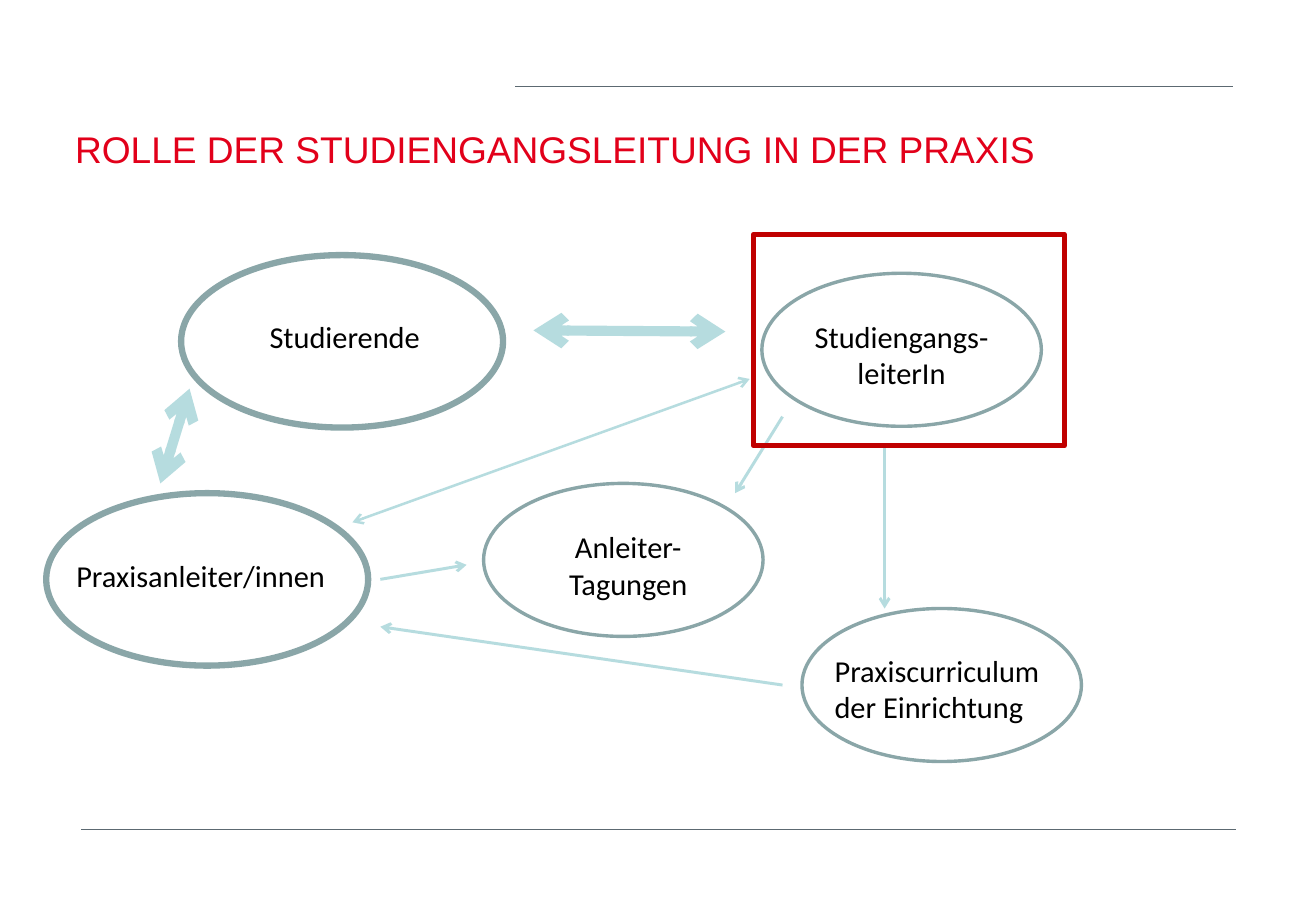
from pptx import Presentation
from pptx.dml.color import RGBColor
from pptx.enum.shapes import MSO_CONNECTOR, MSO_SHAPE
from pptx.enum.text import MSO_ANCHOR, PP_ALIGN
from pptx.oxml.ns import qn
from pptx.util import Inches, Pt
from lxml import etree

STRAIGHT = MSO_CONNECTOR.STRAIGHT
ELLIPSE, RECTANGLE = MSO_SHAPE.OVAL, MSO_SHAPE.RECTANGLE
LEFT, CENTER = PP_ALIGN.LEFT, PP_ALIGN.CENTER
TOP, MIDDLE = MSO_ANCHOR.TOP, MSO_ANCHOR.MIDDLE

BLACK = RGBColor(0x00, 0x00, 0x00)
TITLE_RED = RGBColor(0xE2, 0x00, 0x1A)
FRAME_RED = RGBColor(0xC0, 0x00, 0x00)
OUTLINE = RGBColor(0x8A, 0xA6, 0xA8)
ARROW = RGBColor(0xB6, 0xDC, 0xDF)
RULE = RGBColor(0x5C, 0x69, 0x71)

CELL = 0.1
LARGE = (26.5, 14.2, 3.75)
SMALL = (23, 12.6, 2)


class RoleSlide:
    font_name = "Calibri"
    font_size = 18

    def __init__(self, presentation):
        self.slide = presentation.slides.add_slide(presentation.slide_layouts[6])

    def grid(self, *cells):
        return [Inches(cell * CELL) for cell in cells]

    def outline(self, kind, column, row, columns, rows, color, weight):
        shape = self.slide.shapes.add_shape(kind, *self.grid(column, row, columns, rows))
        shape.shadow.inherit = False
        shape.fill.background()
        shape.line.color.rgb = color
        shape.line.width = Pt(weight)

    def role(self, column, row, size):
        columns, rows, weight = size
        self.outline(ELLIPSE, column, row, columns, rows, OUTLINE, weight)

    def text(self, lines, column, row, columns, rows, alignment=LEFT, anchor=TOP,
             font_name=font_name, font_size=font_size, color=BLACK):
        box = self.slide.shapes.add_textbox(*self.grid(column, row, columns, rows))
        frame = box.text_frame
        frame.word_wrap = True
        frame.vertical_anchor = anchor
        paragraph = frame.paragraphs[0]
        paragraph.alignment = alignment
        for index, line in enumerate(lines):
            if index:
                paragraph.add_line_break()
            run = paragraph.add_run()
            run.text = line
            run.font.name = font_name
            run.font.size = Pt(font_size)
            run.font.color.rgb = color

    def line(self, start, end, color, weight, arrowheads=()):
        connector = self.slide.shapes.add_connector(STRAIGHT, *self.grid(*start, *end))
        connector.line.color.rgb = color
        connector.line.width = Pt(weight)
        properties = connector.line._get_or_add_ln()
        for arrowhead in arrowheads:
            etree.SubElement(properties, qn(f"a:{arrowhead}"), type="arrow")
        etree.SubElement(connector._element.spPr, qn("a:effectLst"))

    def arrow(self, start, end, weight=1.75, both=False):
        arrowheads = ("headEnd", "tailEnd") if both else ("tailEnd",)
        self.line(start, end, ARROW, weight, arrowheads)


def main():
    presentation = Presentation()
    presentation.slide_width = Inches(10.83)
    presentation.slide_height = Inches(7.5)
    page = RoleSlide(presentation)

    page.line((6.7, 68.3), (101.7, 68.3), RULE, 0.25)
    page.line((42.4, 7.1), (101.5, 7.1), RULE, 0.25)
    page.text(["ROLLE DER STUDIENGANGSLEITUNG IN DER PRAXIS"], 5.2, 7.6, 98.6, 9.2,
              anchor=MIDDLE, font_name="Arial", font_size=22, color=TITLE_RED)

    page.role(14.9, 21, LARGE)
    page.text(["Studierende"], 21.2, 25.7, 19.6, 7)
    page.role(62.7, 22.5, SMALL)
    page.text(["Studiengangs-leiterIn"], 64.4, 25.7, 19.6, 7, CENTER)
    page.role(66, 50.1, SMALL)
    page.text(["Praxiscurriculum", "der Einrichtung"], 67.7, 53.2, 21.3, 7)
    page.role(39.8, 39.8, SMALL)
    page.text(["Anleiter-", "Tagungen"], 45.3, 43, 12.8, 7, CENTER)
    page.role(3.8, 40.6, LARGE)
    page.text(["Praxisanleiter/innen"], 5.3, 45.4, 23.6, 7)

    page.arrow((43.9, 27.2), (59.7, 27.3), 6, both=True)
    page.arrow((13.2, 39.8), (15.6, 32), 6, both=True)
    page.arrow((61.7, 31.2), (29, 43), 1.5, both=True)
    page.arrow((72.8, 36.7), (72.8, 50.1))
    page.arrow((64.4, 34.3), (60.5, 40.6))
    page.arrow((64.4, 56.4), (31.3, 51.6))
    page.arrow((31.3, 47.7), (38.4, 46.5))
    page.outline(RECTANGLE, 62, 19.3, 25.6, 17.4, FRAME_RED, 3)

    presentation.save("out.pptx")


if __name__ == "__main__":
    main()
